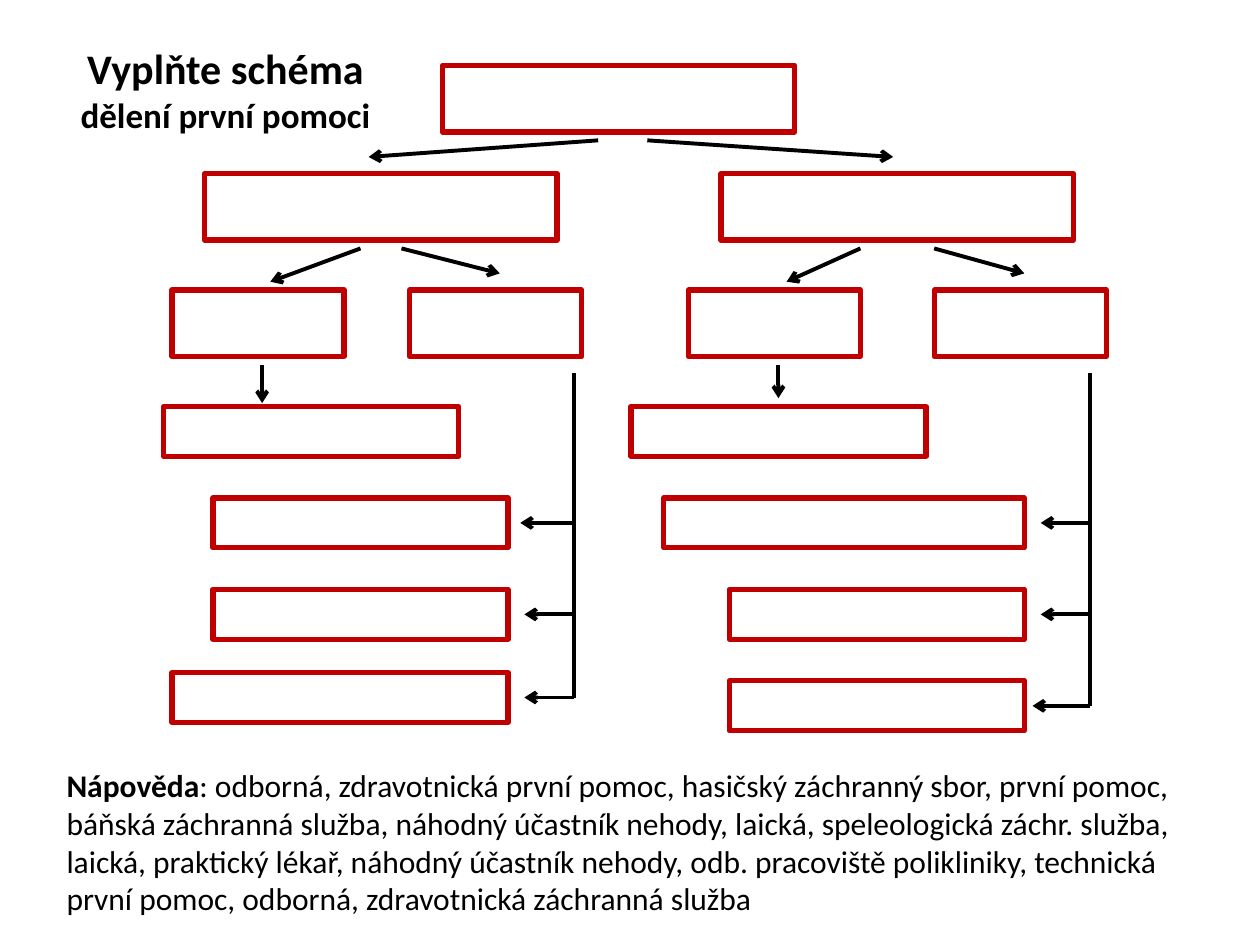
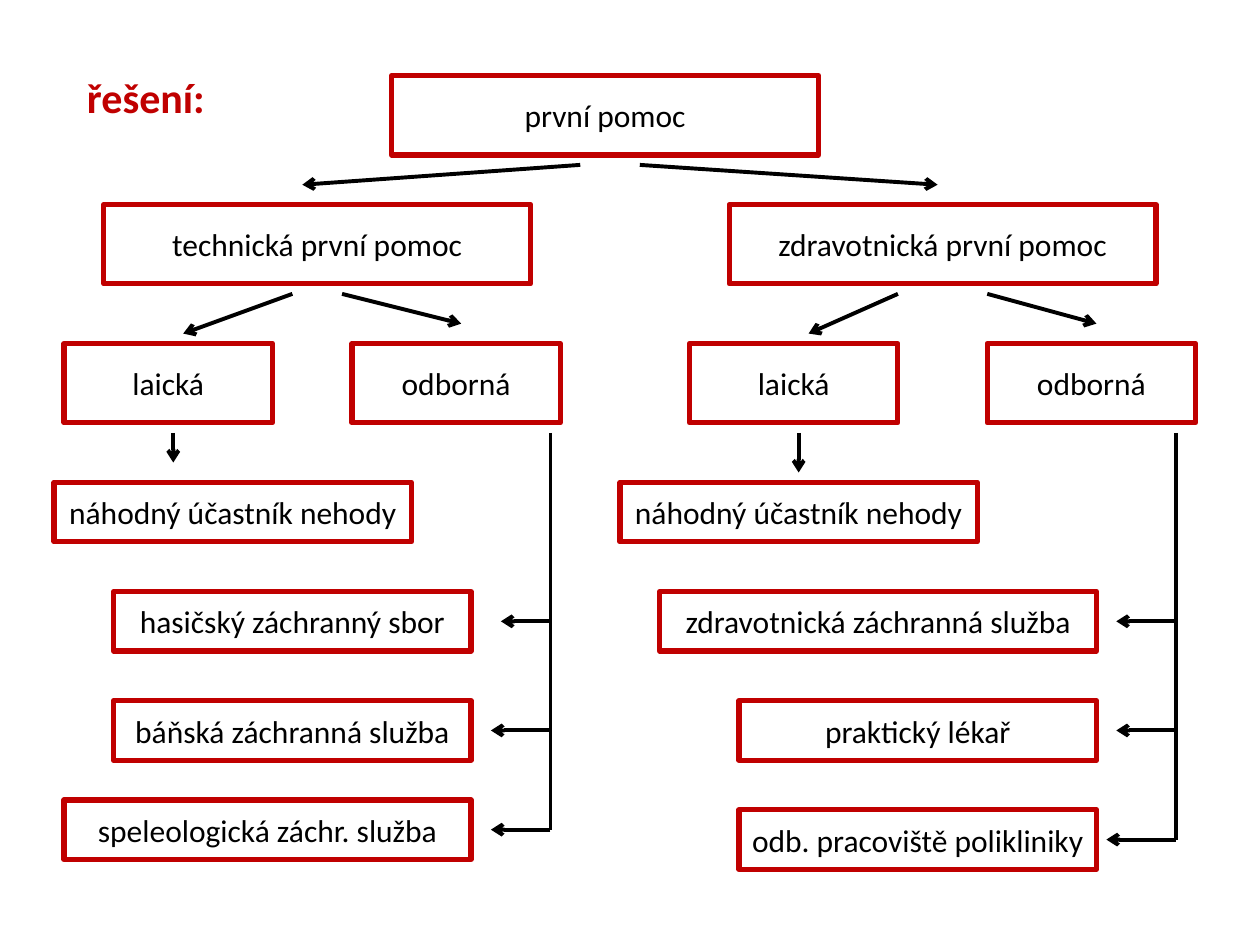
"""Build a fill-in first aid diagram and its solution."""
from dataclasses import dataclass

from lxml import etree
from pptx import Presentation
from pptx.dml.color import RGBColor
from pptx.enum.shapes import MSO_CONNECTOR, MSO_SHAPE
from pptx.enum.text import MSO_ANCHOR, MSO_AUTO_SIZE, PP_ALIGN
from pptx.oxml.ns import qn
from pptx.util import Inches, Pt

RECTANGLE = MSO_SHAPE.RECTANGLE
STRAIGHT = MSO_CONNECTOR.STRAIGHT
LEFT, CENTER = PP_ALIGN.LEFT, PP_ALIGN.CENTER
TOP, MIDDLE = MSO_ANCHOR.TOP, MSO_ANCHOR.MIDDLE
FIXED_SIZE = MSO_AUTO_SIZE.NONE
TITLE_ONLY = 5


@dataclass(frozen=True)
class Theme:
    """Colours, type sizes and line widths of both slides."""
    font: str = "Calibri"
    ink: RGBColor = RGBColor(0, 0, 0)
    paper: RGBColor = RGBColor(255, 255, 255)
    accent: RGBColor = RGBColor(0xC0, 0, 0)
    heading: Pt = Pt(24)
    subheading: Pt = Pt(20)
    body: Pt = Pt(18)
    border: Pt = Pt(3)
    arrow: Pt = Pt(2.25)


THEME = Theme()
COLUMNS, ROWS = 115, 80


@dataclass(frozen=True)
class Scheme:
    """Frame of the diagram in inches, and grid places that vary by slide."""
    left: float
    top: float
    width: float
    height: float
    stem_row: float
    lay_tip_row: float
    first_branch_tip: float

    def x(self, column):
        """Turn a grid column into a length from the left edge."""
        return Inches(self.left + column * self.width / COLUMNS)

    def y(self, row):
        """Turn a grid row into a length from the top edge."""
        return Inches(self.top + row * self.height / ROWS)


EXERCISE = Scheme(1.3, 0.52, 7.48, 5.28, 37, 40.6, 43.5)
SOLUTION = Scheme(0.43, 0.6, 9.06, 6.3, 36, 39, 45)

TALL, LOW = 8, 6
LEVELS = [
    (0, TALL, 43, [(34, "první pomoc")]),
    (13, TALL, 43, [(5, "technická první pomoc"), (68, "zdravotnická první pomoc")]),
    (27, TALL, 21, [(1, "laická"), (30, "odborná"), (64, "laická"), (94, "odborná")]),
    (41, LOW, 36, [(0, "náhodný účastník nehody"), (57, "náhodný účastník nehody")]),
    (52, LOW, 36, [(6, "hasičský záchranný sbor")]),
    (52, LOW, 44, [(61, "zdravotnická záchranná služba")]),
    (63, LOW, 36, [(6, "báňská záchranná služba"), (69, "praktický lékař")]),
    (73, LOW, 41, [(1, "speleologická záchr. služba")]),
    (74, LOW, 36, [(69, "odb. pracoviště polikliniky")]),
]
SPLITS = [
    (59, 9, 89, 11), (53, 9, 25, 11),
    (94, 22, 105, 25), (85, 22, 76, 26),
    (29, 22, 41, 25), (24, 22, 13, 26),
]


def apply(target, values):
    """Set every attribute named in a dict of format values."""
    for attribute, value in values.items():
        setattr(target, attribute, value)


def write(frame, runs, align=LEFT, anchor=TOP, margins=(0.1, 0.05)):
    """Fill a text frame with one paragraph of (text, size, bold, colour) runs."""
    side, edge = (Inches(margin) for margin in margins)
    apply(frame, {
        "word_wrap": True, "auto_size": FIXED_SIZE, "vertical_anchor": anchor,
        "margin_left": side, "margin_right": side,
        "margin_top": edge, "margin_bottom": edge,
    })
    paragraph = frame.paragraphs[0]
    paragraph.alignment = align
    for text, size, bold, colour in runs:
        run = paragraph.add_run()
        run.text = text
        apply(run.font, {"name": THEME.font, "size": size, "bold": bold})
        run.font.color.rgb = colour


def add_titled_slide(deck, place, runs, align):
    """Add a title-only slide with its title moved to the given place."""
    slide = deck.slides.add_slide(deck.slide_layouts[TITLE_ONLY])
    title = slide.shapes.title
    apply(title, dict(zip(("left", "top", "width", "height"), map(Inches, place))))
    write(title.text_frame, runs, align)
    return slide


def add_note(slide, place, runs):
    """Add free text at a place in inches."""
    note = slide.shapes.add_textbox(*map(Inches, place))
    write(note.text_frame, runs)


def add_box(slide, scheme, column, row, columns, rows, label):
    """Add a red-framed box on the grid, empty if it has no label."""
    box = slide.shapes.add_shape(
        RECTANGLE, scheme.x(column), scheme.y(row),
        scheme.x(column + columns) - scheme.x(column),
        scheme.y(row + rows) - scheme.y(row))
    box.shadow.inherit = False
    box.fill.solid()
    box.fill.fore_color.rgb = THEME.paper
    box.line.color.rgb = THEME.accent
    box.line.width = THEME.border
    if label:
        write(box.text_frame, [(label, THEME.body, False, THEME.ink)],
              CENTER, MIDDLE, (0, 0))


def add_link(slide, scheme, start_column, start_row, end_column, end_row, arrow=True):
    """Add a black line on the grid, with an arrowhead at its end if wanted."""
    link = slide.shapes.add_connector(
        STRAIGHT, scheme.x(start_column), scheme.y(start_row),
        scheme.x(end_column), scheme.y(end_row))
    link.line.color.rgb = THEME.ink
    link.line.width = THEME.arrow
    properties = link._element.spPr
    if arrow:
        etree.SubElement(properties.find(qn("a:ln")), qn("a:tailEnd"), type="arrow")
    etree.SubElement(properties, qn("a:effectLst"))


def add_stem(slide, scheme, column, branches):
    """Add a stem down to its last branch, and the branches to the left."""
    add_link(slide, scheme, column, scheme.stem_row, column, branches[-1][1], arrow=False)
    for tip, row in branches:
        add_link(slide, scheme, column, row, tip, row)


def add_diagram(slide, scheme, solved):
    """Draw the division of first aid, with labels when solved."""
    for row, rows, columns, boxes in LEVELS:
        for column, label in boxes:
            add_box(slide, scheme, column, row, columns, rows, label if solved else "")
    for split in SPLITS:
        add_link(slide, scheme, *split)
    for column, tip_row in ((12, scheme.lay_tip_row), (75, 40)):
        add_link(slide, scheme, column, 36, column, tip_row)
    add_stem(slide, scheme, 50, [(scheme.first_branch_tip, 55), (44, 66), (44, 76)])
    add_stem(slide, scheme, 113, [(107, 55), (107, 66), (106, 77)])


def add_exercise(deck):
    """Add the slide with empty boxes and the hint."""
    slide = add_titled_slide(deck, (0.43, 0.29, 2.72, 0.84), [
        ("Vyplňte schéma ", THEME.heading, True, THEME.ink),
        ("dělení první pomoci", THEME.subheading, True, THEME.ink),
    ], CENTER)
    add_diagram(slide, EXERCISE, solved=False)
    add_note(slide, (0.43, 6.03, 9.06, 1.31), [
        ("Nápověda", THEME.body, True, THEME.ink),
        (": odborná, zdravotnická první pomoc, hasičský záchranný sbor, "
         "první pomoc, báňská záchranná služba, náhodný účastník nehody, "
         "laická, speleologická záchr. služba, laická, praktický lékař, "
         "náhodný účastník nehody, odb. pracoviště polikliniky, technická "
         "první pomoc, odborná, zdravotnická záchranná služba",
         THEME.body, False, THEME.ink),
    ])


def add_solution(deck):
    """Add the slide with every box filled in."""
    slide = add_titled_slide(deck, (0.59, 0.52, 1.34, 0.5), [
        ("řešení:", THEME.heading, True, THEME.accent),
    ], LEFT)
    add_diagram(slide, SOLUTION, solved=True)


def main():
    """Build both slides and save them."""
    deck = Presentation()
    apply(deck, {"slide_width": Inches(10), "slide_height": Inches(7.5)})
    add_exercise(deck)
    add_solution(deck)
    deck.save("out.pptx")


if __name__ == "__main__":
    main()
